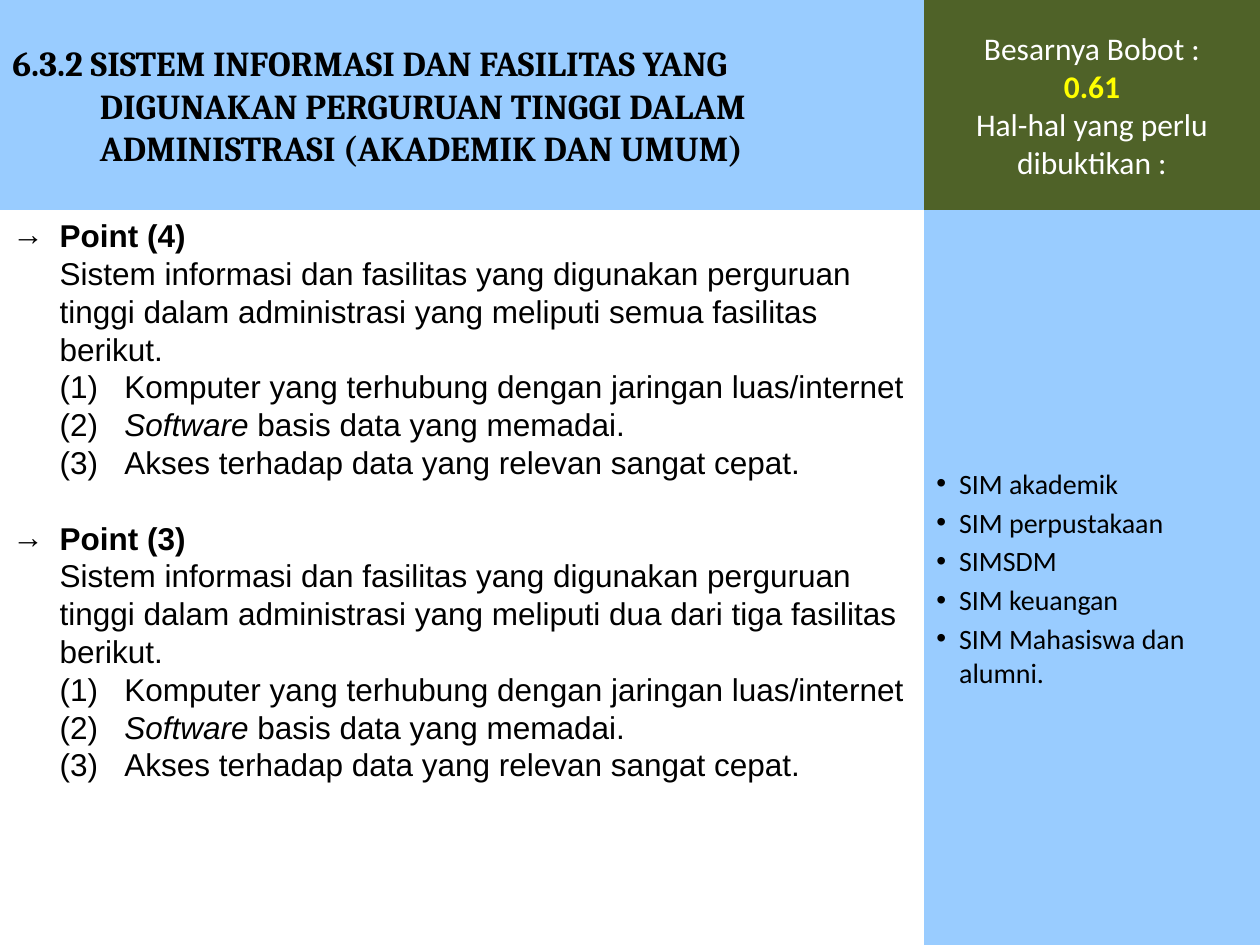
from pptx import Presentation
from pptx.dml.color import RGBColor
from pptx.enum.shapes import MSO_SHAPE as SHAPE
from pptx.enum.text import MSO_ANCHOR as ANCHOR, PP_ALIGN as ALIGN
from pptx.oxml.ns import qn
from pptx.util import Pt
from lxml.etree import SubElement

# Content: each paragraph is a list of (text, font changes) runs
TITLE = ("6.3.2 SISTEM INFORMASI DAN FASILITAS YANG DIGUNAKAN PERGURUAN TINGGI "
         "DALAM ADMINISTRASI (AKADEMIK DAN UMUM)")
WEIGHT = [
    [("Besarnya Bobot :", {})],
    [("0.61", {"bold": True, "color": "FFFF00"})],
    [("Hal-hal yang perlu dibuktikan :", {})],
]
EVIDENCE = ["SIM akademik", "SIM perpustakaan", "SIMSDM", "SIM keuangan",
            "SIM Mahasiswa dan alumni."]
POINTS = [("Point (4)", "semua fasilitas"), ("Point (3)", "dua dari tiga fasilitas")]
INTRO = ("Sistem informasi dan fasilitas yang digunakan perguruan tinggi dalam "
         "administrasi yang meliputi {} berikut.")
FACILITIES = [
    [("Komputer yang terhubung dengan jaringan luas/internet", {})],
    [("Software", {"italic": True}), (" basis data yang memadai.", {})],
    [("Akses terhadap data yang relevan sangat cepat.", {})],
]

# Layout and formats
W, H = 720, 540
SPLIT_X, SPLIT_Y = 528, 120
BLUE, GREEN = "99CCFF", "4F6228"
TITLE_FONT = {"name": "Cambria", "size": Pt(20), "bold": True, "color": "000000"}
WEIGHT_FONT = {"name": "Calibri", "size": Pt(18), "color": "FFFFFF"}
LIST_FONT = {"name": "Calibri", "size": Pt(16), "color": "000000"}
BODY_FONT = {"name": "Arial", "size": Pt(18), "color": "000000"}
BODY_LEFT, ITEM_LEFT = 27, 64


def rgb(value):
    return RGBColor.from_string(value)


def set_font(font, values):
    for name, value in values.items():
        if name == "color":
            font.color.rgb = rgb(value)
        else:
            setattr(font, name, value)


def add_panel(slide, x, y, w, h, fill):
    sp = slide.shapes.add_shape(SHAPE.RECTANGLE, Pt(x), Pt(y), Pt(w), Pt(h))
    sp.shadow.inherit = False
    sp.fill.solid()
    sp.fill.fore_color.rgb = rgb(fill)
    sp.line.fill.background()
    tf = sp.text_frame
    tf.word_wrap = True
    tf.vertical_anchor = ANCHOR.MIDDLE
    return tf


def add_para(tf, runs, font, left=0, hang=0, bullet=None, align=ALIGN.LEFT, before=0):
    first = not tf.paragraphs[0].runs
    p = tf.paragraphs[0] if first else tf.add_paragraph()
    p.alignment = align
    p.space_before = Pt(0 if first else before)
    pPr = p._p.get_or_add_pPr()
    pPr.set("marL", str(Pt(left)))
    pPr.set("indent", str(Pt(-hang)))
    if bullet:
        SubElement(pPr, qn("a:buFont")).set("typeface", "Arial")
        SubElement(pPr, qn("a:buChar")).set("char", bullet)
    for text, changes in runs:
        r = p.add_run()
        r.text = text
        set_font(r.font, {**font, **changes})
    return p


prs = Presentation()
prs.slide_width, prs.slide_height = Pt(W), Pt(H)
s = prs.slides.add_slide(prs.slide_layouts[6])

# Body: scored points with their numbered facilities
tf = s.shapes.add_textbox(0, Pt(SPLIT_Y), Pt(SPLIT_X), Pt(H - SPLIT_Y)).text_frame
tf.word_wrap = True
for heading, scope in POINTS:
    add_para(tf, [(heading, {"bold": True})], BODY_FONT, BODY_LEFT, BODY_LEFT,
             bullet="→", before=21.6)
    add_para(tf, [(INTRO.format(scope), {})], BODY_FONT, BODY_LEFT)
    for number, runs in enumerate(FACILITIES, 1):
        add_para(tf, [(f"({number})\t", {}), *runs], BODY_FONT,
                 ITEM_LEFT, ITEM_LEFT - BODY_LEFT)
for p in tf.paragraphs:
    p.line_spacing = Pt(21.6)

# Title band
tf = add_panel(s, 0, 0, SPLIT_X, SPLIT_Y, BLUE)
add_para(tf, [(TITLE, {})], TITLE_FONT, 50, 50)

# Evidence list
tf = add_panel(s, SPLIT_X, SPLIT_Y, W - SPLIT_X, H - SPLIT_Y, BLUE)
for item in EVIDENCE:
    add_para(tf, [(item, {})], LIST_FONT, 13, 13, bullet="•", before=3)

# Weight box
tf = add_panel(s, SPLIT_X, 0, W - SPLIT_X, SPLIT_Y, GREEN)
for runs in WEIGHT:
    add_para(tf, runs, WEIGHT_FONT, align=ALIGN.CENTER)

prs.save("out.pptx")
